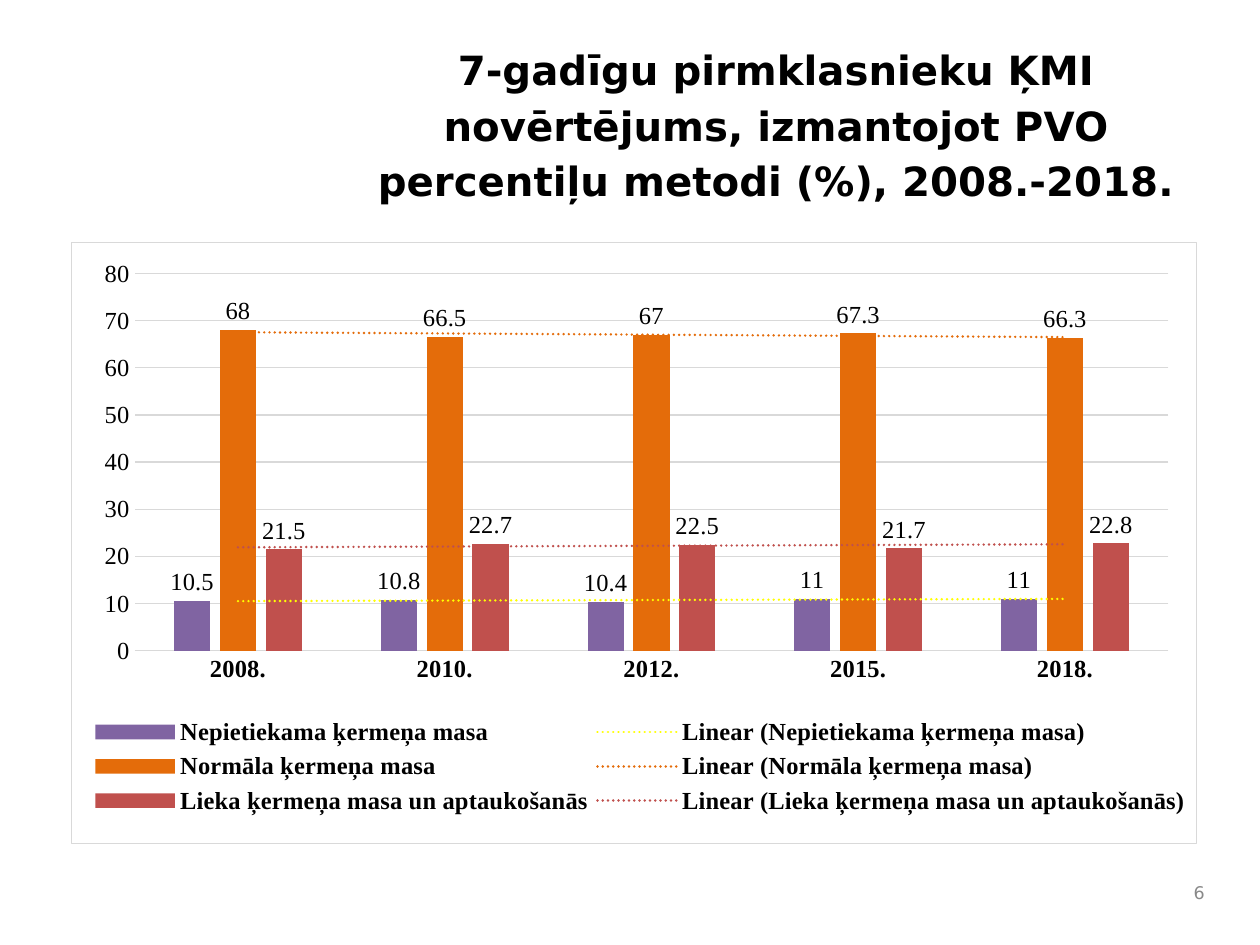
from dataclasses import dataclass

from pptx import Presentation
from pptx.chart.data import CategoryChartData
from pptx.dml.color import RGBColor
from pptx.enum.chart import XL_CHART_TYPE, XL_LABEL_POSITION, XL_LEGEND_POSITION, XL_TICK_MARK
from pptx.enum.text import MSO_ANCHOR, PP_ALIGN
from pptx.oxml import parse_xml
from pptx.oxml.ns import nsdecls, qn
from pptx.util import Emu, Pt

COLUMNS = XL_CHART_TYPE.COLUMN_CLUSTERED
OUTSIDE_END = XL_LABEL_POSITION.OUTSIDE_END
BOTTOM = XL_LEGEND_POSITION.BOTTOM
NO_TICK = XL_TICK_MARK.NONE
MIDDLE = MSO_ANCHOR.MIDDLE
CENTER, RIGHT = PP_ALIGN.CENTER, PP_ALIGN.RIGHT
EMU_PER_PX = 914400 / 126


@dataclass(frozen=True)
class Theme:
    heading_font: str = "DejaVu Sans"
    chart_font: str = "Times New Roman"
    ink: str = "000000"
    muted: str = "898989"
    rule: str = "D9D9D9"
    title_size: int = 23
    chart_size: int = 14
    number_size: int = 10
    rule_width: float = 0.75
    trend_width: float = 1.5


THEME = Theme()
YEARS = ["2008.", "2010.", "2012.", "2015.", "2018."]
WEIGHT_GROUPS = [
    ("Nepietiekama ķermeņa masa", [10.5, 10.8, 10.4, 11, 11], "8064A2", "FFFF00"),
    ("Normāla ķermeņa masa", [68, 66.5, 67, 67.3, 66.3], "E46C0A", "E46C0A"),
    ("Lieka ķermeņa masa un aptaukošanās", [21.5, 22.7, 22.5, 21.7, 22.8], "C0504D", "C0504D"),
]
CHART_BOX = (71, 242, 1126, 602)
PLOT_BOX = (63, 31, 1035, 378)
LEGEND_BOX = (15, 470, 1109, 110)


def px(length):
    return Emu(round(length * EMU_PER_PX))


def style_font(font, name, size, color, bold=False):
    font.name = name
    font.size = Pt(size)
    font.bold = bold
    font.color.rgb = RGBColor.from_string(color)


def write_text(frame, text, *, font, size, color, align, bold=False, spacing=None, after=None):
    frame.word_wrap = True
    frame.vertical_anchor = MIDDLE
    paragraph = frame.paragraphs[0]
    paragraph.alignment = align
    paragraph.line_spacing = spacing
    paragraph.space_before = Pt(0)
    paragraph.space_after = after
    run = paragraph.add_run()
    run.text = text
    style_font(run.font, font, size, color, bold)


def line_xml(color, width, dash="solid", cap="flat"):
    return (
        f'<a:ln w="{Pt(width)}" cap="{cap}"><a:solidFill><a:srgbClr val="{color}"/></a:solidFill>'
        f'<a:prstDash val="{dash}"/></a:ln>'
    )


def draw_rule(line):
    line.color.rgb = RGBColor.from_string(THEME.rule)
    line.width = Pt(THEME.rule_width)


def add_title(slide, left, top, width, height):
    title = slide.shapes.title
    title.left, title.top, title.width, title.height = map(px, (left, top, width, height))
    write_text(
        title.text_frame,
        "7-gadīgu pirmklasnieku ĶMI novērtējums, izmantojot PVO percentiļu metodi (%), 2008.-2018.",
        font=THEME.heading_font, size=THEME.title_size, color=THEME.ink,
        align=CENTER, bold=True, spacing=1.15, after=Pt(6),
    )


def add_trend(series, color):
    trend = parse_xml(
        f'<c:trendline {nsdecls("c", "a")}><c:spPr>'
        f'{line_xml(color, THEME.trend_width, "sysDot", "rnd")}</c:spPr>'
        '<c:trendlineType val="linear"/><c:dispRSqr val="0"/><c:dispEq val="0"/></c:trendline>'
    )
    series._element.find(qn("c:cat")).addprevious(trend)


def style_series(series, color, trend_color):
    series.format.fill.solid()
    series.format.fill.fore_color.rgb = RGBColor.from_string(color)
    series.invert_if_negative = False
    labels = series.data_labels
    labels.show_value = True
    labels.position = OUTSIDE_END
    style_font(labels.font, THEME.chart_font, THEME.chart_size, THEME.ink)
    add_trend(series, trend_color)


def style_axes(chart):
    years, percent = chart.category_axis, chart.value_axis
    for axis, bold in ((years, True), (percent, False)):
        axis.major_tick_mark = axis.minor_tick_mark = NO_TICK
        style_font(axis.tick_labels.font, THEME.chart_font, THEME.chart_size, THEME.ink, bold)
    draw_rule(years.format.line)
    percent.minimum_scale, percent.maximum_scale, percent.major_unit = 0, 80, 10
    percent.format.line.fill.background()
    draw_rule(percent.major_gridlines.format.line)


def frame_chart(chart):
    border = parse_xml(
        f'<c:spPr {nsdecls("c", "a")}><a:noFill/>{line_xml(THEME.rule, THEME.rule_width)}</c:spPr>'
    )
    chart._chartSpace.find(qn("c:chart")).addnext(border)


def place_part(part, position, box, chart_size, target=""):
    for layout in part.findall(qn("c:layout")):
        part.remove(layout)
    modes = "".join(f'<c:{side}Mode val="edge"/>' for side in "xy")
    extents = "".join(
        f'<c:{side} val="{length / whole:.4f}"/>'
        for side, length, whole in zip("xywh", box, chart_size * 2)
    )
    part.insert(position, parse_xml(
        f'<c:layout {nsdecls("c")}><c:manualLayout>{target}{modes}{extents}'
        '</c:manualLayout></c:layout>'
    ))


def add_legend(chart, chart_size):
    chart.has_legend = True
    legend = chart.legend
    legend.position = BOTTOM
    legend.include_in_layout = False
    style_font(legend.font, THEME.chart_font, THEME.chart_size, THEME.ink, True)
    place_part(legend._element, 1, LEGEND_BOX, chart_size)


def add_bmi_chart(slide, left, top, width, height):
    bmi = CategoryChartData()
    bmi.categories = YEARS
    for name, shares, _, _ in WEIGHT_GROUPS:
        bmi.add_series(name, shares)
    chart = slide.shapes.add_chart(COLUMNS, *map(px, (left, top, width, height)), bmi).chart
    chart.has_title = False
    style_font(chart.font, THEME.chart_font, THEME.chart_size, THEME.ink)
    columns = chart.plots[0]
    columns.gap_width, columns.overlap = 219, -27
    columns.vary_by_categories = False
    for series, (_, _, color, trend_color) in zip(columns.series, WEIGHT_GROUPS):
        style_series(series, color, trend_color)
    style_axes(chart)
    frame_chart(chart)
    add_legend(chart, (width, height))
    plot_area = chart._chartSpace.find(qn("c:chart")).find(qn("c:plotArea"))
    place_part(plot_area, 0, PLOT_BOX, (width, height), '<c:layoutTarget val="inner"/>')


def add_page_number(slide, left, top, width, height):
    number = slide.shapes.add_textbox(*map(px, (left, top, width, height)))
    write_text(
        number.text_frame, "6", font=THEME.heading_font, size=THEME.number_size,
        color=THEME.muted, align=RIGHT,
    )


def main():
    deck = Presentation()
    deck.slide_width, deck.slide_height = px(1260), px(945)
    slide = deck.slides.add_slide(deck.slide_layouts[5])
    add_title(slide, 313, 30, 927, 183)
    add_bmi_chart(slide, *CHART_BOX)
    add_page_number(slide, 1175, 871, 42, 42)
    deck.save("out.pptx")


if __name__ == "__main__":
    main()
